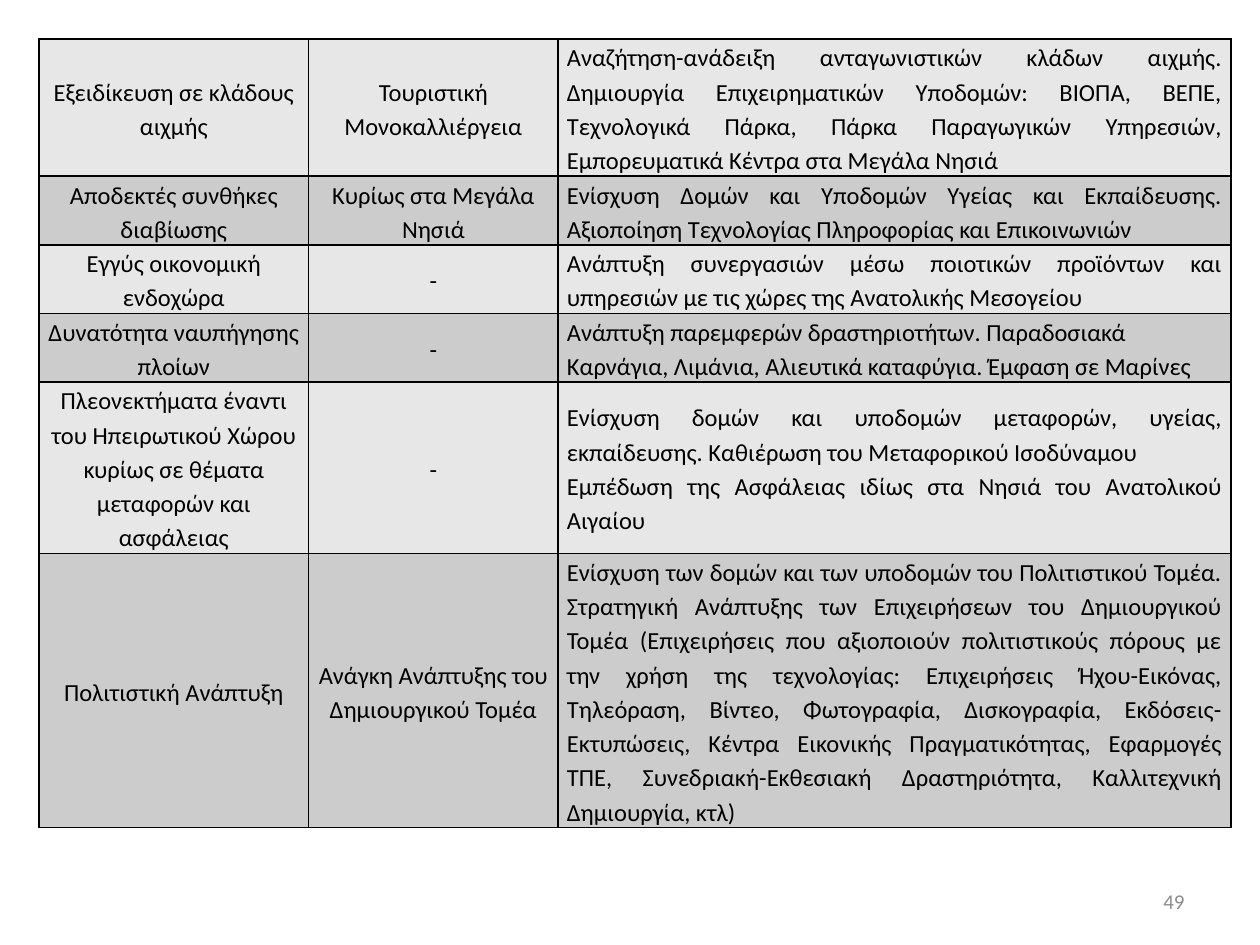
from lxml.etree import SubElement
from pptx import Presentation
from pptx.dml.color import RGBColor
from pptx.enum.text import MSO_ANCHOR, PP_ALIGN
from pptx.oxml.ns import qn
from pptx.util import Inches, Pt

COLORS = {"text": "000000", "number": "8C8C8C", "border": "000000",
          "light": "E7E7E7", "dark": "CCCCCC"}
FONT = "Calibri"
LINE_HEIGHT = 0.27
COL_WIDTHS = [2.14, 1.98, 5.34]

# Text lines the row holds, then its three cells
ROWS = [
    (4, "Εξειδίκευση σε κλάδους αιχμής", "Τουριστική Μονοκαλλιέργεια",
     "Αναζήτηση-ανάδειξη ανταγωνιστικών κλάδων αιχμής. Δημιουργία Επιχειρηματικών "
     "Υποδομών: ΒΙΟΠΑ, ΒΕΠΕ, Τεχνολογικά Πάρκα, Πάρκα Παραγωγικών Υπηρεσιών, "
     "Εμπορευματικά Κέντρα στα Μεγάλα Νησιά"),
    (2, "Αποδεκτές συνθήκες διαβίωσης", "Κυρίως στα Μεγάλα Νησιά",
     "Ενίσχυση Δομών και Υποδομών Υγείας και Εκπαίδευσης. "
     "Αξιοποίηση Τεχνολογίας Πληροφορίας και Επικοινωνιών"),
    (2, "Εγγύς οικονομική ενδοχώρα", "-",
     "Ανάπτυξη συνεργασιών μέσω ποιοτικών προϊόντων και υπηρεσιών "
     "με τις χώρες της Ανατολικής Μεσογείου"),
    (2, "Δυνατότητα ναυπήγησης πλοίων", "-",
     "Ανάπτυξη παρεμφερών δραστηριοτήτων. Παραδοσιακά Καρνάγια, Λιμάνια, "
     "Αλιευτικά καταφύγια. Έμφαση σε Μαρίνες"),
    (5, "Πλεονεκτήματα έναντι του Ηπειρωτικού Χώρου κυρίως σε θέματα "
     "μεταφορών και ασφάλειας", "-",
     "Ενίσχυση δομών και υποδομών μεταφορών, υγείας, εκπαίδευσης. "
     "Καθιέρωση του Μεταφορικού Ισοδύναμου\n"
     "Εμπέδωση της Ασφάλειας ιδίως στα Νησιά του Ανατολικού Αιγαίου"),
    (8, "Πολιτιστική Ανάπτυξη", "Ανάγκη Ανάπτυξης του Δημιουργικού Τομέα",
     "Ενίσχυση των δομών και των υποδομών του Πολιτιστικού Τομέα. Στρατηγική "
     "Ανάπτυξης των Επιχειρήσεων του Δημιουργικού Τομέα (Επιχειρήσεις που αξιοποιούν "
     "πολιτιστικούς πόρους με την χρήση της τεχνολογίας: Επιχειρήσεις Ήχου-Εικόνας, "
     "Τηλεόραση, Βίντεο, Φωτογραφία, Δισκογραφία, Εκδόσεις-Εκτυπώσεις, Κέντρα "
     "Εικονικής Πραγματικότητας, Εφαρμογές ΤΠΕ, Συνεδριακή-Εκθεσιακή Δραστηριότητα, "
     "Καλλιτεχνική Δημιουργία, κτλ)"),
]
LEFT_ALIGNED_ROW = 3
CELL_FORMAT = {"margin_left": Inches(0.07), "margin_right": Inches(0.07),
               "margin_top": 0, "margin_bottom": 0,
               "vertical_anchor": MSO_ANCHOR.MIDDLE}


def write_text(tf, text, size, color, align, spacing=None):
    tf.text = text
    for p in tf.paragraphs:
        p.alignment, p.line_spacing = align, spacing
        for r in p.runs:
            r.font.name, r.font.size = FONT, Pt(size)
            r.font.color.rgb = RGBColor.from_string(COLORS[color])


def add_borders(cell):
    tc_pr = cell._tc.get_or_add_tcPr()
    for i, side in enumerate(("lnL", "lnR", "lnT", "lnB")):
        ln = tc_pr.makeelement(qn(f"a:{side}"), {"w": str(Pt(1))})
        fill = SubElement(ln, qn("a:solidFill"))
        SubElement(fill, qn("a:srgbClr"), val=COLORS["border"])
        tc_pr.insert(i, ln)


prs = Presentation()
prs.slide_width, prs.slide_height = Inches(10), Inches(7.5)
s = prs.slides.add_slide(prs.slide_layouts[6])

# Table
height = LINE_HEIGHT * sum(row[0] for row in ROWS)
table = s.shapes.add_table(len(ROWS), len(COL_WIDTHS), Inches(0.31), Inches(0.31),
                           Inches(sum(COL_WIDTHS)), Inches(height)).table
table.first_row = table.horz_banding = False
for col, width in zip(table.columns, COL_WIDTHS):
    col.width = Inches(width)

for i, (lines, *texts) in enumerate(ROWS):
    table.rows[i].height = Inches(LINE_HEIGHT * lines)
    last_align = PP_ALIGN.LEFT if i == LEFT_ALIGNED_ROW else PP_ALIGN.JUSTIFY
    aligns = (PP_ALIGN.CENTER, PP_ALIGN.CENTER, last_align)
    for j, (text, align) in enumerate(zip(texts, aligns)):
        cell = table.cell(i, j)
        for name, value in CELL_FORMAT.items():
            setattr(cell, name, value)
        cell.fill.solid()
        cell.fill.fore_color.rgb = RGBColor.from_string(COLORS["dark" if i % 2 else "light"])
        write_text(cell.text_frame, text, 14, "text", align, 1.15)
        add_borders(cell)

# Slide number
box = s.shapes.add_textbox(Inches(7.17), Inches(6.95), Inches(2.33), Inches(0.4))
tf = box.text_frame
tf.word_wrap = True
tf.vertical_anchor = MSO_ANCHOR.MIDDLE
write_text(tf, "49", 12, "number", PP_ALIGN.RIGHT)

prs.save("out.pptx")
